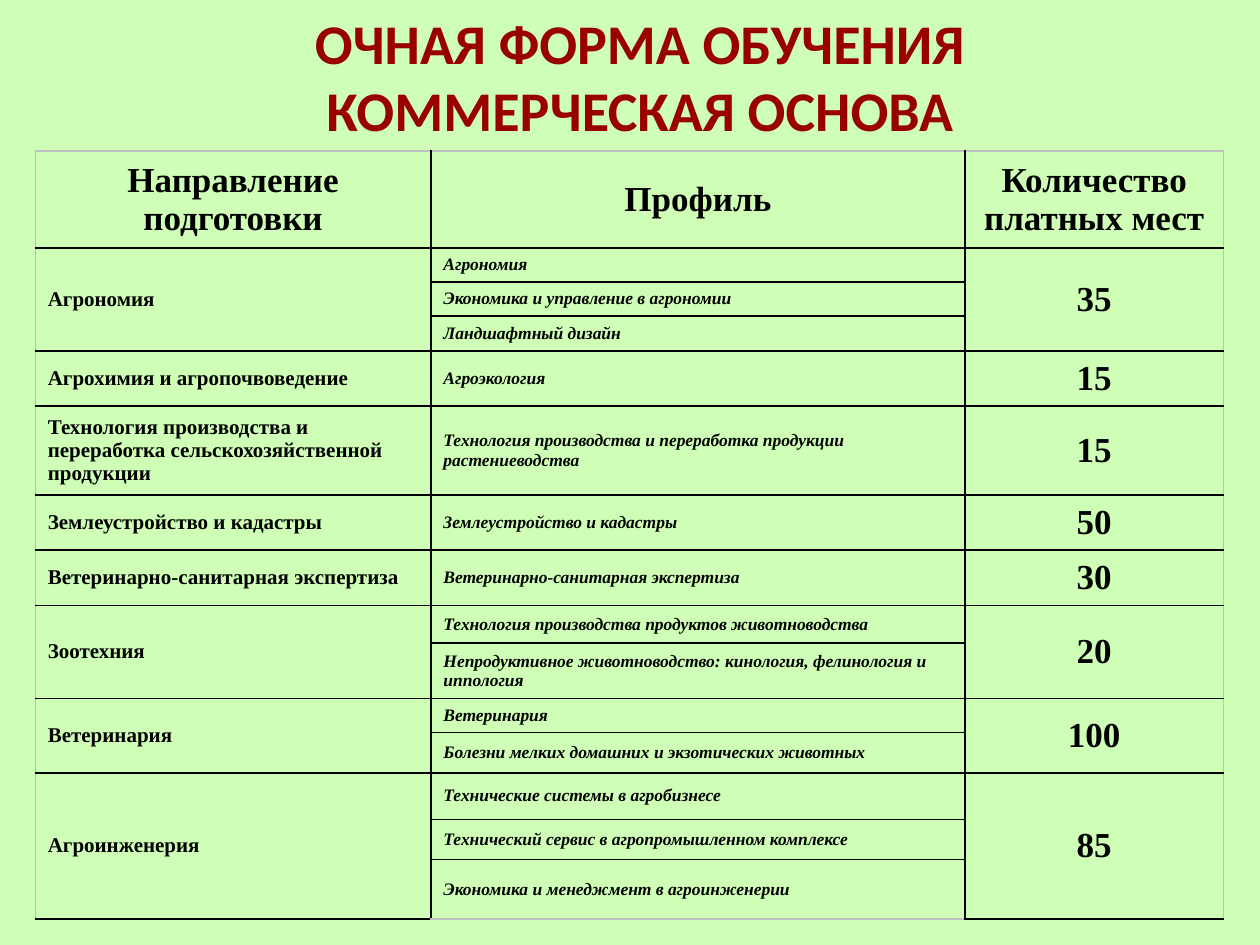
import pptx
import pptx.util
import pptx.dml.color
import pptx.enum.text
import pptx.oxml
import pptx.oxml.ns
from pptx.util import Inches

BACKGROUND = pptx.dml.color.RGBColor(0xCF, 0xFF, 0xB7)
TITLE_RED = pptx.dml.color.RGBColor(0x99, 0x00, 0x00)
BLACK = pptx.dml.color.RGBColor(0x00, 0x00, 0x00)
OUTER_GREY = pptx.dml.color.RGBColor(0xBF, 0xBF, 0xBF)
CENTER = pptx.enum.text.PP_ALIGN.CENTER
LEFT = pptx.enum.text.PP_ALIGN.LEFT

HEADINGS = ["Направление подготовки", "Профиль", "Количество платных мест"]
COLUMN_WIDTHS = [3.14, 4.24, 2.05]
ROW_HEIGHTS = [0.76, 0.27, 0.27, 0.28, 0.43, 0.71, 0.43, 0.44,
               0.3, 0.44, 0.27, 0.32, 0.37, 0.32, 0.47]
# Field of study, its profiles, paid places
PROGRAMMES = [
    ("Агрономия", ["Агрономия", "Экономика и управление в агрономии",
                   "Ландшафтный дизайн"], 35),
    ("Агрохимия и агропочвоведение", ["Агроэкология"], 15),
    ("Технология производства и переработка сельскохозяйственной продукции",
     ["Технология производства и переработка продукции растениеводства"], 15),
    ("Землеустройство и кадастры", ["Землеустройство и кадастры"], 50),
    ("Ветеринарно-санитарная экспертиза",
     ["Ветеринарно-санитарная экспертиза"], 30),
    ("Зоотехния",
     ["Технология производства продуктов животноводства",
      "Непродуктивное животноводство: кинология, фелинология и иппология"], 20),
    ("Ветеринария", ["Ветеринария",
                     "Болезни мелких домашних и экзотических животных"], 100),
    ("Агроинженерия", ["Технические системы в агробизнесе",
                       "Технический сервис в агропромышленном комплексе",
                       "Экономика и менеджмент в агроинженерии"], 85),
]


def write_cell(cell, text, size, align=LEFT, italic=False):
    cell.vertical_anchor = pptx.enum.text.MSO_ANCHOR.MIDDLE
    para = cell.text_frame.paragraphs[0]
    para.text = text
    para.alignment = align
    para.font.name = "Times New Roman"
    para.font.size = pptx.util.Pt(size)
    para.font.bold = True
    para.font.italic = italic
    para.font.color.rgb = BLACK


def add_border(cell, side, color):
    cell._tc.get_or_add_tcPr().append(pptx.oxml.parse_xml(
        f'<a:{side} {pptx.oxml.ns.nsdecls("a")} w="12700"><a:solidFill>'
        f'<a:srgbClr val="{color}"/></a:solidFill></a:{side}>'))


deck = pptx.Presentation()
deck.slide_width, deck.slide_height = Inches(10), Inches(7.5)
slide = deck.slides.add_slide(deck.slide_layouts[6])
slide.background.fill.solid()
slide.background.fill.fore_color.rgb = BACKGROUND

# Title
box = slide.shapes.add_textbox(Inches(0.67), Inches(0.02), Inches(8.82), Inches(1.18))
frame = box.text_frame
frame.word_wrap = True
frame.text = "ОЧНАЯ ФОРМА ОБУЧЕНИЯ\nКОММЕРЧЕСКАЯ ОСНОВА"
for para in frame.paragraphs:
    para.alignment = CENTER
    para.font.name = "Calibri"
    para.font.size = pptx.util.Pt(32)
    para.font.bold = True
    para.font.color.rgb = TITLE_RED

# Table grid
last_row, last_column = len(ROW_HEIGHTS) - 1, len(COLUMN_WIDTHS) - 1
table = slide.shapes.add_table(
    last_row + 1, last_column + 1, Inches(0.28), Inches(1.2),
    Inches(sum(COLUMN_WIDTHS)), Inches(sum(ROW_HEIGHTS))).table
table.first_row = table.horz_banding = False
for column, width in zip(table.columns, COLUMN_WIDTHS):
    column.width = Inches(width)
for row, height in zip(table.rows, ROW_HEIGHTS):
    row.height = Inches(height)

# Borders: grey around the table, black inside
for r in range(last_row + 1):
    for c in range(last_column + 1):
        cell = table.cell(r, c)
        for side, outer in (("lnL", c == 0), ("lnR", c == last_column),
                            ("lnT", r == 0), ("lnB", r == last_row)):
            add_border(cell, side, OUTER_GREY if outer else BLACK)
        cell.fill.background()

# Heading row
for c, heading in enumerate(HEADINGS):
    write_cell(table.cell(0, c), heading, 20, CENTER)

# Programmes, merged over their profiles
top = 1
for field, profiles, places in PROGRAMMES:
    bottom = top + len(profiles) - 1
    if bottom > top:
        for c in (0, 2):
            table.cell(top, c).merge(table.cell(bottom, c))
    write_cell(table.cell(top, 0), field, 12)
    write_cell(table.cell(top, 2), str(places), 20, CENTER)
    for r, profile in enumerate(profiles, top):
        write_cell(table.cell(r, 1), profile, 10, italic=True)
    top = bottom + 1

deck.save("out.pptx")
